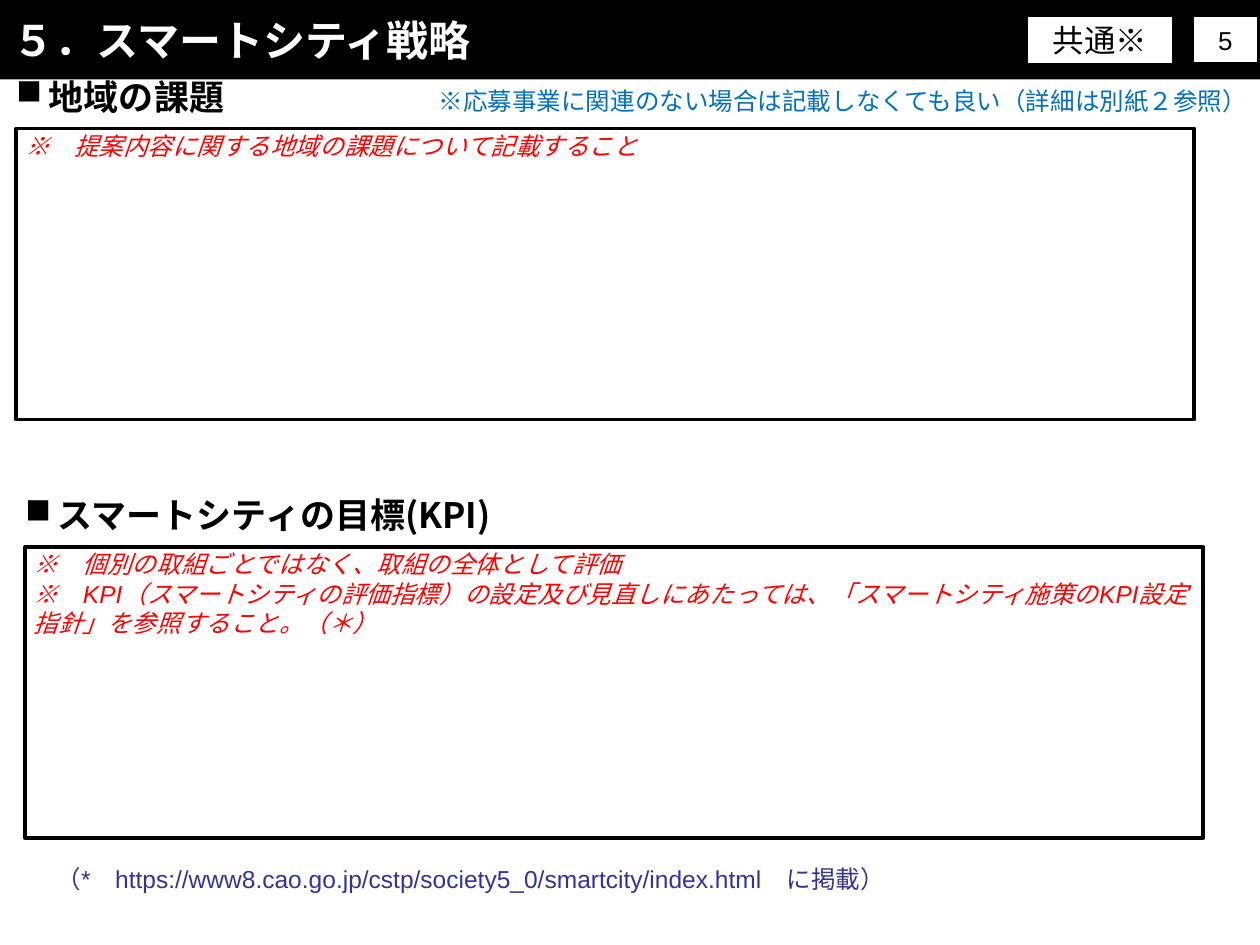
from lxml import etree
from pptx import Presentation, util as u
from pptx.dml.color import RGBColor
from pptx.enum import shapes, text
from pptx.oxml import ns

BLACK = RGBColor(0, 0, 0)
WHITE = RGBColor(255, 255, 255)
RED = RGBColor(255, 0, 0)
BLUE = RGBColor(0, 112, 192)
INDIGO = RGBColor(51, 51, 153)
JAPANESE = "Noto Sans CJK JP"

deck = Presentation()
deck.slide_width, deck.slide_height = u.Inches(10), u.Inches(7.5)
COLUMN = deck.slide_width / 100
ROW = deck.slide_height / 75
page = deck.slides.add_slide(deck.slide_layouts[5])


def grid(left, top, width, height):
    return [int(n) for n in (left * COLUMN, top * ROW, width * COLUMN, height * ROW)]


def add_text(para, wording, size, color, font="Arial", bold=False, italic=False):
    span = para.add_run()
    span.text = wording
    span.font.size = u.Pt(size)
    span.font.name = font
    span.font.bold, span.font.italic = bold, italic
    span.font.color.rgb = color
    east_asian = etree.SubElement(span.font._element, ns.qn("a:ea"))
    east_asian.set("typeface", JAPANESE)


title = page.shapes.title
title.left, title.top, title.width, title.height = grid(0, 0, 100, 6.3)
title.fill.solid()
title.fill.fore_color.rgb = BLACK
title.text_frame.vertical_anchor = text.MSO_ANCHOR.MIDDLE
title.text_frame.auto_size = text.MSO_AUTO_SIZE.NONE
para = title.text_frame.paragraphs[0]
para.alignment = text.PP_ALIGN.LEFT
add_text(para, "５．スマートシティ戦略", 24, WHITE, JAPANESE, bold=True)

sections = [
    ((1.3, 10.2), (0.3, 5.5), [("地域の課題", "Karla")]),
    ((2, 43.4), (1, 38.7), [("スマートシティの", "Karla"), ("目標(KPI)", JAPANESE)]),
]
for frame_corner, heading_corner, heading in sections:
    frame = page.shapes.add_shape(shapes.MSO_SHAPE.RECTANGLE, *grid(*frame_corner, 93.5, 23.1))
    frame.shadow.inherit = False
    frame.fill.background()
    frame.line.color.rgb = BLACK
    frame.line.width = u.Pt(2.25)

    box = page.shapes.add_textbox(*grid(*heading_corner, 46.9, 4.4))
    box.text_frame.word_wrap = True
    box.text_frame.auto_size = text.MSO_AUTO_SIZE.SHAPE_TO_FIT_TEXT
    para = box.text_frame.paragraphs[0]
    para.space_before = u.Pt(1)
    properties = para._p.get_or_add_pPr()
    properties.set("marL", str(u.Inches(0.26)))
    properties.set("indent", str(-u.Inches(0.26)))
    bullet = etree.SubElement(properties, ns.qn("a:buChar"))
    bullet.set("char", "■")
    for wording, font in heading:
        add_text(para, wording, 20, BLACK, font, bold=True)

notes = [
    ((1, 9.9, 92.1, 5.7), RED, text.PP_ALIGN.LEFT,
     ["※　提案内容に関する地域の課題について記載すること"]),
    ((1.7, 43.1, 93.9, 10.4), RED, text.PP_ALIGN.LEFT,
     ["※　個別の取組ごとではなく、取組の全体として評価",
      "※　KPI（スマートシティの評価指標）の設定及び見直しにあたっては、"
      "「スマートシティ施策のKPI設定指針」を参照すること。（＊）"]),
    ((32.7, 6.3, 67.3, 3.4), BLUE, text.PP_ALIGN.RIGHT,
     ["※応募事業に関連のない場合は記載しなくても良い（詳細は別紙２参照）"]),
    ((3.5, 68.1, 80.3, 3.4), INDIGO, text.PP_ALIGN.LEFT,
     ["（*　https://www8.cao.go.jp/cstp/society5_0/smartcity/index.html　に掲載）"]),
]
for area, color, alignment, lines in notes:
    box = page.shapes.add_textbox(*grid(*area))
    box.text_frame.word_wrap = True
    box.text_frame.auto_size = text.MSO_AUTO_SIZE.SHAPE_TO_FIT_TEXT
    for index, wording in enumerate(lines):
        para = box.text_frame.add_paragraph() if index else box.text_frame.paragraphs[0]
        para.alignment = alignment
        add_text(para, wording, 14, color, italic=color == RED)

labels = [
    ((81.5, 1.3, 11.6, 3.8), "共通※", 18, 1),
    ((94.7, 1.3, 5.1, 3.7), "5", 14.8, 0.75),
]
for area, wording, size, border in labels:
    label = page.shapes.add_shape(shapes.MSO_SHAPE.RECTANGLE, *grid(*area))
    label.shadow.inherit = False
    label.fill.solid()
    label.fill.fore_color.rgb = WHITE
    label.line.color.rgb = BLACK
    label.line.width = u.Pt(border)
    label.text_frame.vertical_anchor = text.MSO_ANCHOR.MIDDLE
    para = label.text_frame.paragraphs[0]
    para.alignment = text.PP_ALIGN.CENTER
    add_text(para, wording, size, BLACK)

deck.save("out.pptx")
